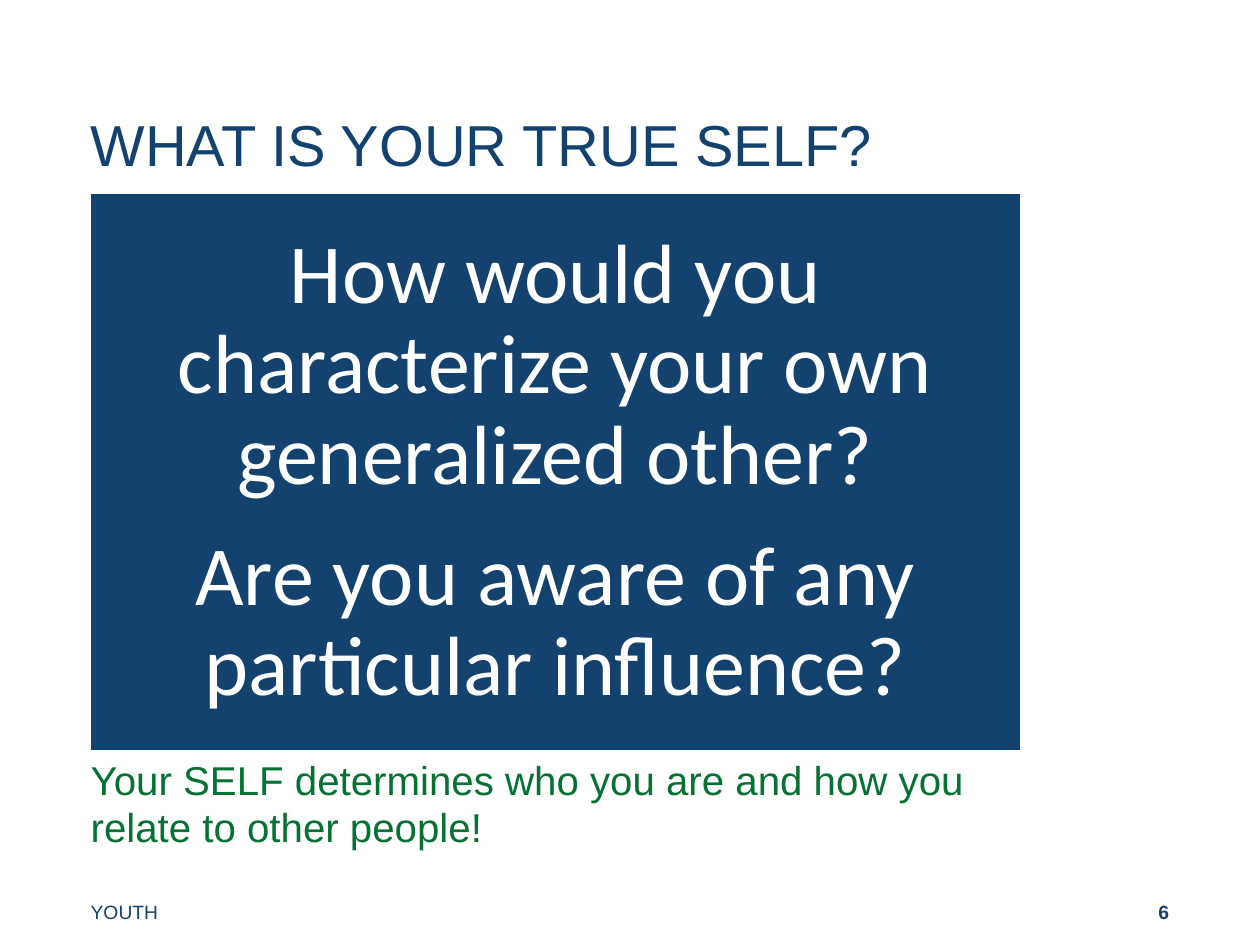
import dataclasses

import pptx
import pptx.dml.color
import pptx.enum.shapes
import pptx.enum.text
import pptx.util

Pt = pptx.util.Pt
ALIGN = pptx.enum.text.PP_ALIGN
ANCHOR = pptx.enum.text.MSO_ANCHOR
COLORS = {"navy": "13426F", "green": "057233", "white": "FFFFFF"}


@dataclasses.dataclass(frozen=True)
class TextBlock:
    place: tuple[float, float, float, float]
    margins: tuple[float, float, float, float]
    lines: tuple[str, ...]
    size: float
    color: str
    spacing: float | pptx.util.Length
    font: str = "Arial"
    bold: bool = False
    align: ALIGN = ALIGN.LEFT
    anchor: ANCHOR = ANCHOR.TOP
    gap: float = 0


FOOTER_MARGIN = 51.1
TITLE = TextBlock((0.72, 53.28, 620.64, 63.36), (FOOTER_MARGIN, 3.6, 7.2, 3.6),
                  ("WHAT IS YOUR TRUE SELF?",), 33, "navy", Pt(34),
                  anchor=ANCHOR.MIDDLE)
QUESTIONS = TextBlock((51.4, 110.5, 531.8, 318.7), (14.4, 14.4, 14.4, 14.4),
                      ("How would you characterize your own generalized other?",
                       "Are you aware of any particular influence?"),
                      48, "white", 0.9, font="Calibri", align=ALIGN.CENTER,
                      anchor=ANCHOR.MIDDLE, gap=17)
TEXT_BOXES = (
    TextBlock((0.72, 432, 599.76, 54.72), (FOOTER_MARGIN, 0, 0, 0),
              ("Your SELF determines who you are and how you relate to other people!",),
              23, "green", Pt(27)),
    TextBlock((0.72, 496.08, 243.36, 43.2), (FOOTER_MARGIN, 3.6, 0, 11.5),
              ("YOUTH",), 11, "navy", Pt(13.3), anchor=ANCHOR.BOTTOM),
    TextBlock((573.12, 496.08, 146.16, 43.2), (0, 3.6, FOOTER_MARGIN, 11.5),
              ("6",), 11, "navy", Pt(13.3), bold=True, align=ALIGN.RIGHT,
              anchor=ANCHOR.BOTTOM),
)


def rgb(name: str) -> pptx.dml.color.RGBColor:
    return pptx.dml.color.RGBColor.from_string(COLORS[name])


def apply_format(target: object, values: dict[str, object]) -> None:
    for name, value in values.items():
        setattr(target, name, value)


def fill_text(shape: pptx.shapes.base.BaseShape, block: TextBlock) -> None:
    """Place the shape and write the block's paragraphs into it."""
    sides = ("left", "top", "width", "height")
    apply_format(shape, dict(zip(sides, map(Pt, block.place))))
    frame = shape.text_frame
    margins = ("margin_left", "margin_top", "margin_right", "margin_bottom")
    apply_format(frame, dict(zip(margins, map(Pt, block.margins))))
    apply_format(frame, {"word_wrap": True, "vertical_anchor": block.anchor,
                         "auto_size": pptx.enum.text.MSO_AUTO_SIZE.NONE})
    frame.text = "\n".join(block.lines)
    for para in frame.paragraphs:
        apply_format(para, {"alignment": block.align, "line_spacing": block.spacing,
                            "space_before": Pt(0), "space_after": Pt(block.gap)})
        for span in para.runs:
            apply_format(span.font, {"name": block.font, "size": Pt(block.size),
                                     "bold": block.bold})
            span.font.color.rgb = rgb(block.color)


def add_panel(page: pptx.slide.Slide, block: TextBlock) -> None:
    panel = page.shapes.add_shape(pptx.enum.shapes.MSO_SHAPE.RECTANGLE,
                                  *map(Pt, block.place))
    panel.shadow.inherit = False
    panel.fill.solid()
    panel.fill.fore_color.rgb = rgb("navy")
    panel.line.color.rgb = rgb("white")
    panel.line.width = Pt(1)
    fill_text(panel, block)


def main() -> None:
    deck = pptx.Presentation()
    apply_format(deck, {"slide_width": Pt(720), "slide_height": Pt(540)})
    page = deck.slides.add_slide(deck.slide_layouts.get_by_name("Title Only"))
    fill_text(page.shapes.title, TITLE)
    add_panel(page, QUESTIONS)
    for block in TEXT_BOXES:
        box = page.shapes.add_textbox(*map(Pt, block.place))
        fill_text(box, block)
    deck.save("out.pptx")


if __name__ == "__main__":
    main()
